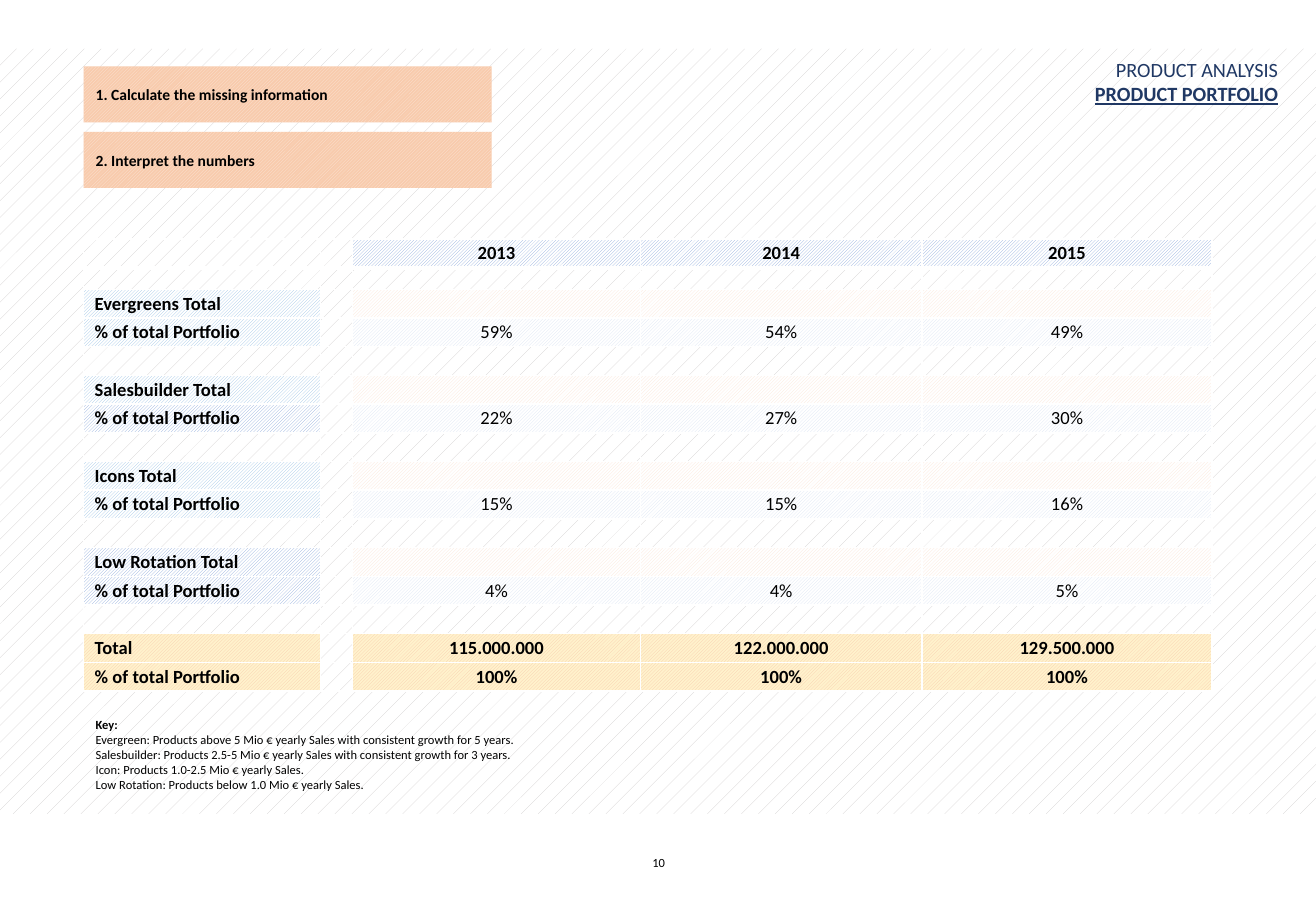
from lxml import etree
from pptx import Presentation
from pptx import util as u
from pptx.dml.color import RGBColor
from pptx.enum import dml, shapes, text
from pptx.oxml.ns import qn

COLORS = {"white": "FFFFFF", "black": "000000", "navy": "203864", "gray": "D0CECE",
          "blue": "8FAADC", "sky": "9DC3E6", "ice": "DAE3F3",
          "peach": "FBE5D6", "orange": "F8CBAD", "cream": "FFF2CC"}
LIGHT = dml.MSO_PATTERN.LIGHT_UPWARD_DIAGONAL
DARK = dml.MSO_PATTERN.DARK_UPWARD_DIAGONAL
DOTS = dml.MSO_PATTERN.PERCENT_5
LEFT, CENTER, RIGHT = text.PP_ALIGN.LEFT, text.PP_ALIGN.CENTER, text.PP_ALIGN.RIGHT
MIDDLE = text.MSO_ANCHOR.MIDDLE

YEARS = ["2013", "2014", "2015"]
GROUPS = [
    ("Evergreens Total", "sky", "sky", ["59%", "54%", "49%"]),
    ("Salesbuilder Total", "sky", "blue", ["22%", "27%", "30%"]),
    ("Icons Total", "sky", "sky", ["15%", "15%", "16%"]),
    ("Low Rotation Total", "blue", "blue", ["4%", "4%", "5%"]),
]
TOTALS = [("Total", ["115.000.000", "122.000.000", "129.500.000"]),
          ("% of total Portfolio", ["100%"] * 3)]
KEY = ["Evergreen: Products above 5 Mio € yearly Sales with consistent growth for 5 years.",
       "Salesbuilder: Products 2.5-5 Mio € yearly Sales with consistent growth for 3 years.",
       "Icon: Products 1.0-2.5 Mio € yearly Sales.",
       "Low Rotation: Products below 1.0 Mio € yearly Sales."]


def rgb(name):
    return RGBColor.from_string(COLORS[name])


def write(p, words, size=11, color="black", bold=False, underline=False, align=LEFT):
    p.alignment = align
    r = p.add_run()
    r.text = words
    r.font.name = "Calibri"
    r.font.size = u.Pt(size)
    r.font.bold = bold
    r.font.underline = underline
    r.font.color.rgb = rgb(color)


class Deck:
    def __init__(self, width, height):
        self.prs = Presentation()
        self.prs.slide_width, self.prs.slide_height = u.Cm(width), u.Cm(height)
        self.s = self.prs.slides.add_slide(self.prs.slide_layouts[6])

    def pattern(self, fill, kind, fore, back="white"):
        fill.patterned()
        fill.pattern = kind
        fill.fore_color.rgb = rgb(fore)
        fill.back_color.rgb = rgb(back)

    def rect(self, box, kind, fore, back="white", words=None, **style):
        sp = self.s.shapes.add_shape(shapes.MSO_SHAPE.RECTANGLE, *map(u.Cm, box))
        sp.shadow.inherit = False
        sp.line.fill.background()
        self.pattern(sp.fill, kind, fore, back)
        if words:
            sp.text_frame.vertical_anchor = MIDDLE
            write(sp.text_frame.paragraphs[0], words, **style)

    def textbox(self, box, lines, **style):
        tf = self.s.shapes.add_textbox(*map(u.Cm, box)).text_frame
        tf.word_wrap = True
        for i, (words, extra) in enumerate(lines):
            p = tf.paragraphs[0] if i == 0 else tf.add_paragraph()
            write(p, words, **style, **extra)

    def table(self, left, top, widths, heights):
        tbl = self.s.shapes.add_table(len(heights), len(widths), u.Cm(left), u.Cm(top),
                                      u.Cm(sum(widths)), u.Cm(sum(heights))).table
        tbl.first_row = tbl.horz_banding = False
        for col, width in zip(tbl.columns, widths):
            col.width = u.Cm(width)
        for row, height in zip(tbl.rows, heights):
            row.height = u.Cm(height)
        for cell in tbl.iter_cells():
            cell.margin_top = cell.margin_bottom = 0
            cell.vertical_anchor = MIDDLE
            self.borders(cell)
            cell.fill.background()
            end = etree.SubElement(cell.text_frame.paragraphs[0]._p, qn("a:endParaRPr"))
            end.set("sz", "800")
        for cell in tbl.rows[0].cells:
            cell._tc.tcPr.find(qn("a:lnB")).set("w", str(u.Pt(3)))
        return tbl

    def borders(self, cell):
        for i, side in enumerate(("a:lnL", "a:lnR", "a:lnT", "a:lnB")):
            ln = etree.Element(qn(side), w=str(u.Pt(1)))
            fill = etree.SubElement(ln, qn("a:solidFill"))
            etree.SubElement(fill, qn("a:srgbClr"), val=COLORS["white"])
            cell._tc.tcPr.insert(i, ln)

    def cell(self, cell, words, fore, back="white", kind=LIGHT, margin=0.02, **style):
        cell.margin_left = cell.margin_right = u.Cm(margin)
        self.pattern(cell.fill, kind, fore, back)
        if words:
            write(cell.text_frame.paragraphs[0], words, **style)

    def label(self, cell, words, fore, back="white"):
        self.cell(cell, words, fore, back, margin=0.23, bold=True)

    def values(self, tbl, row, values, fore, back="white", **style):
        for col, words in enumerate(values, 2):
            self.cell(tbl.cell(row, col), words, fore, back, align=CENTER, **style)


def main():
    d = Deck(27.51, 19.05)
    d.rect((0, 1.02, 27.51, 16), DOTS, "gray")
    d.textbox((10.67, 17.75, 6.2, 1.02), [("10", {})], size=7.4, align=CENTER)

    tbl = d.table(1.75, 5, [4.95, 0.67, 6.02, 5.88, 6.07], [0.6, 0.45] + [0.6] * 14)
    d.values(tbl, 0, YEARS, "blue", bold=True)
    for i, (name, total_color, share_color, shares) in enumerate(GROUPS):
        row = 2 + 3 * i
        d.label(tbl.cell(row, 0), name, total_color)
        d.values(tbl, row, [""] * 3, "peach", kind=DARK)
        d.label(tbl.cell(row + 1, 0), "% of total Portfolio", share_color)
        d.values(tbl, row + 1, shares, "ice")
    for row, (name, values) in enumerate(TOTALS, 14):
        d.label(tbl.cell(row, 0), name, "orange", "cream")
        d.values(tbl, row, values, "orange", "cream", bold=True)

    d.textbox((19.05, 1.07, 7.92, 1.27),
              [("PRODUCT ANALYSIS", {}),
               ("PRODUCT PORTFOLIO", {"bold": True, "underline": True})],
              size=12, color="navy", align=RIGHT)
    for i, task in enumerate(["1. Calculate the missing information",
                              "2. Interpret the numbers"]):
        d.rect((1.75, 1.39 + 1.37 * i, 8.53, 1.17), LIGHT, "peach", "orange",
               task, size=9.2, bold=True)
    d.textbox((1.75, 14.88, 18.62, 1.83),
              [("Key:", {"bold": True})] + [(line, {}) for line in KEY], size=7.4)
    d.prs.save("out.pptx")


if __name__ == "__main__":
    main()
